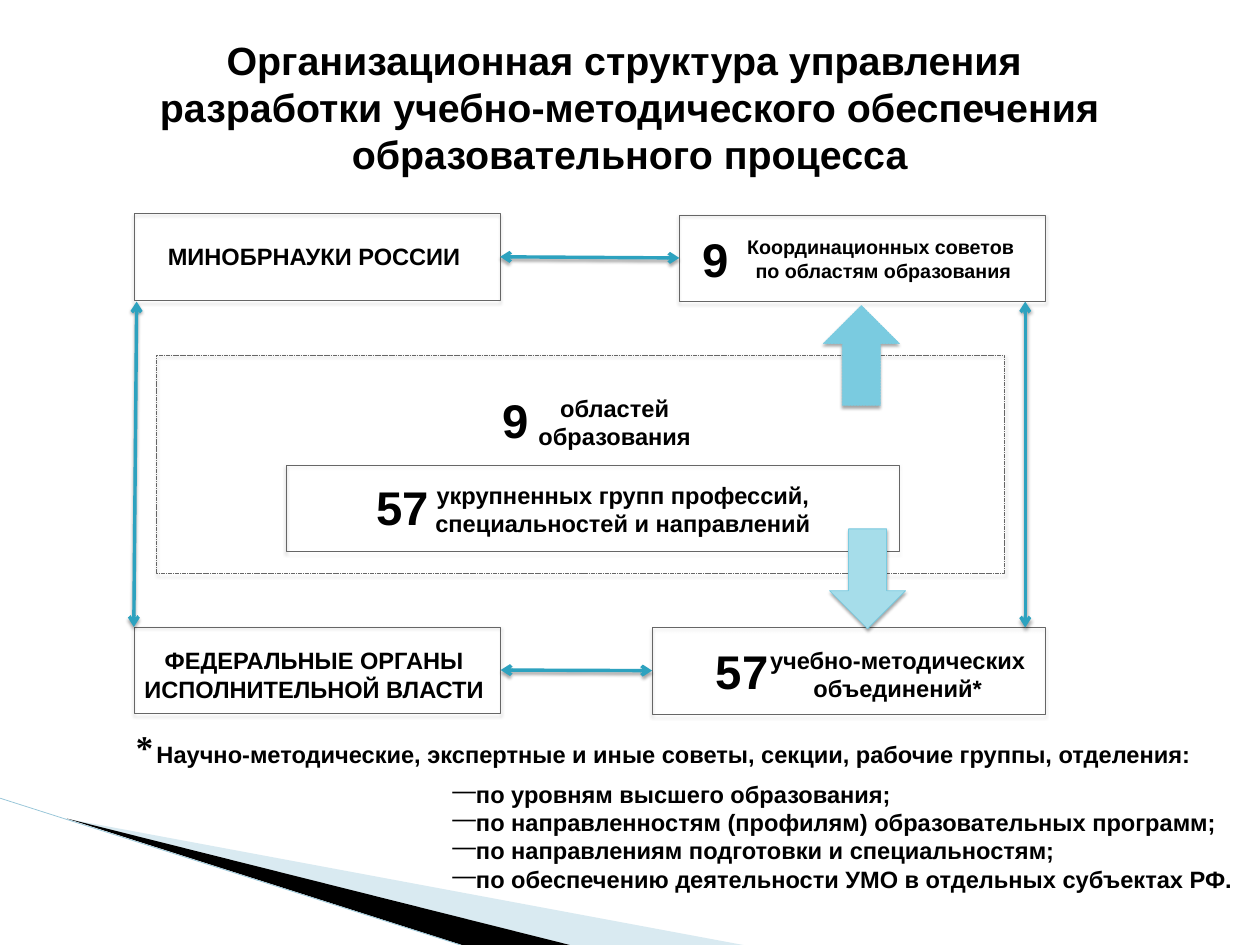
from lxml.etree import SubElement
from pptx import Presentation
from pptx.dml.color import RGBColor
from pptx.enum.dml import MSO_LINE
from pptx.enum.shapes import MSO_CONNECTOR, MSO_SHAPE
from pptx.enum.text import MSO_ANCHOR, MSO_AUTO_SIZE, PP_ALIGN
from pptx.oxml.ns import qn
from pptx.util import Inches, Pt

COLORS = {
    "text": "000000", "outline": "666666", "link": "2DA2BF",
    "up": "7ACBE0", "down": "A6DDEA", "wedge": "A0CBDC", "edge": "97C5D8",
}
TITLE = [
    "Организационная структура управления ",
    "разработки учебно-методического обеспечения",
    "образовательного процесса",
]
DIRECTIONS = [
    "по уровням высшего образования;",
    "по направленностям (профилям) образовательных программ;",
    "по направлениям подготовки и специальностям;",
    "по обеспечению деятельности УМО в отдельных субъектах РФ.",
]
LABELS = [
    (13.28, 11.34, 5.1, 1.11, ["учебно-методических объединений*"], 30),
    (7.24, 8.43, 7.49, 1.11, ["укрупненных групп профессий, специальностей и направлений"], 30),
    (8.81, 6.9, 4.06, 1.11, ["областей образования"], 30),
    (2.41, 11.35, 6.26, 1.11, ["ФЕДЕРАЛЬНЫЕ ОРГАНЫ ИСПОЛНИТЕЛЬНОЙ ВЛАСТИ"], 30),
    (2.41, 4.21, 6.26, 0.61, ["МИНОБРНАУКИ РОССИИ"], 30),
    (12.85, 4.1, 5.45, 0.94, ["Координационных советов ", "по областям образования"], 25),
    (2.38, 13.01, 19.12, 0.61,
     ["Научно-методические, экспертные и иные советы, секции, рабочие группы, отделения: "], 30),
]
COUNTS = [(12.04, 4.02, "9"), (12.51, 11.28, "57"), (8.51, 6.86, "9"), (6.52, 8.38, "57")]
BOXES = [
    (2.36, 3.77, 6.46, 1.53),
    (11.98, 3.79, 6.46, 1.53),
    (2.37, 11.06, 6.46, 1.53),
    (11.5, 11.07, 6.93, 1.53),
    (5.04, 8.2, 10.82, 1.53),
]
LINKS = [
    (8.83, 11.82, 11.5, 11.83),
    (8.82, 4.53, 11.98, 4.55),
    (2.41, 5.32, 2.36, 11.06),
    (18.08, 5.32, 18.08, 11.07),
]


def color(name):
    """Return the named colour."""
    return RGBColor.from_string(COLORS[name])


def add_shadow(effects):
    """Put a soft downward shadow into an effect list."""
    shadow = SubElement(effects, qn("a:outerShdw"), blurRad=str(Pt(4)), dist=str(Pt(3)),
                        dir="5400000", rotWithShape="0")
    rgb = SubElement(shadow, qn("a:srgbClr"), val=COLORS["text"])
    SubElement(rgb, qn("a:alpha"), val="35000")


def add_run(p, text, size, font="Arial"):
    """Add a bold black run to a paragraph."""
    r = p.add_run()
    r.text = text
    r.font.size = Pt(size)
    r.font.name = font
    r.font.bold = True
    r.font.color.rgb = color("text")


def add_bullet(p):
    """Give a paragraph a dash bullet with a hanging indent."""
    pPr = p._p.get_or_add_pPr()
    pPr.set("marL", str(Inches(0.37)))
    pPr.set("indent", str(-Inches(0.37)))
    SubElement(pPr, qn("a:buChar"), char="―")


def add_text(s, x, y, w, h, lines, size, font="Arial", bulleted=False):
    """Add a wrapped text box, centred or as a bulleted list."""
    tf = s.shapes.add_textbox(Inches(x), Inches(y), Inches(w), Inches(h)).text_frame
    tf.word_wrap = True
    for i, line in enumerate(lines):
        p = tf.add_paragraph() if i else tf.paragraphs[0]
        if bulleted:
            add_bullet(p)
        else:
            p.alignment = PP_ALIGN.CENTER
        add_run(p, line, size, font)


def add_title(s):
    """Place and format the title placeholder."""
    sp = s.shapes.title
    sp.left, sp.top, sp.width, sp.height = Inches(0), Inches(1.18), Inches(22.22), Inches(1.41)
    tf = sp.text_frame
    tf.auto_size = MSO_AUTO_SIZE.NONE
    tf.word_wrap = True
    tf.vertical_anchor = MSO_ANCHOR.MIDDLE
    tf.margin_left = tf.margin_right = Inches(0.22)
    tf.margin_top = tf.margin_bottom = Inches(0.11)
    p = tf.paragraphs[0]
    p.alignment = PP_ALIGN.CENTER
    for i, line in enumerate(TITLE):
        if i:
            p.add_line_break()
        add_run(p, line, 50)


def add_figure(s, kind, x, y, w, h, fill=None, line="outline", width=0.75, dashed=False):
    """Add a shadowed preset shape."""
    sp = s.shapes.add_shape(kind, Inches(x), Inches(y), Inches(w), Inches(h))
    if fill:
        sp.fill.solid()
        sp.fill.fore_color.rgb = color(fill)
    else:
        sp.fill.background()
    sp.line.color.rgb = color(line)
    sp.line.width = Pt(width)
    if dashed:
        sp.line.dash_style = MSO_LINE.SQUARE_DOT
    sp.shadow.inherit = False
    add_shadow(sp._element.spPr.find(qn("a:effectLst")))


def add_line(s, x1, y1, x2, y2, name, width, arrows=False):
    """Add a straight line, or a shadowed two-headed arrow."""
    sp = s.shapes.add_connector(MSO_CONNECTOR.STRAIGHT, Inches(x1), Inches(y1),
                                Inches(x2), Inches(y2))
    sp.line.color.rgb = color(name)
    sp.line.width = Pt(width)
    effects = SubElement(sp._element.spPr, qn("a:effectLst"))
    if arrows:
        for end in ("a:headEnd", "a:tailEnd"):
            SubElement(sp.line._get_or_add_ln(), qn(end), type="arrow")
        add_shadow(effects)


def add_wedge(s, points, name, alpha=None):
    """Add a borderless polygon, optionally translucent."""
    start, *rest = [(Inches(x), Inches(y)) for x, y in points]
    builder = s.shapes.build_freeform(*start)
    builder.add_line_segments(rest, close=True)
    sp = builder.convert_to_shape()
    sp.fill.solid()
    sp.fill.fore_color.rgb = color(name)
    sp.line.fill.background()
    sp.shadow.inherit = False
    if alpha:
        rgb = sp._element.spPr.find(qn("a:solidFill")).find(qn("a:srgbClr"))
        SubElement(rgb, qn("a:alpha"), val=str(alpha * 1000))


def main():
    """Build the slide and save it."""
    prs = Presentation()
    prs.slide_width, prs.slide_height = Inches(22.22), Inches(16.67)
    s = prs.slides.add_slide(prs.slide_layouts[5])
    add_wedge(s, [(1.21, 14.45), (13.11, 16.67), (10.05, 16.67)], "wedge", 40)
    add_wedge(s, [(1.18, 14.44), (10.05, 16.67), (8.15, 16.67)], "text")
    add_line(s, 0, 14.08, 8.12, 16.67, "edge", 0.95)
    add_title(s)
    add_text(s, 7.88, 13.7, 14.23, 2.12, DIRECTIONS, 30, bulleted=True)
    add_text(s, 1.97, 12.75, 1.16, 0.84, ["*"], 44, "Times New Roman")
    for label in LABELS:
        add_text(s, *label)
    for x, y, count in COUNTS:
        add_text(s, x, y, 1.16, 1.11, [count], 60)
    for box in BOXES:
        add_figure(s, MSO_SHAPE.RECTANGLE, *box)
    add_figure(s, MSO_SHAPE.RECTANGLE, 2.76, 6.26, 14.96, 3.86, dashed=True)
    for link in LINKS:
        add_line(s, *link, "link", 4.33, arrows=True)
    add_figure(s, MSO_SHAPE.UP_ARROW, 14.52, 5.39, 1.34, 1.76, "up", "up", 1, dashed=True)
    add_figure(s, MSO_SHAPE.DOWN_ARROW, 14.63, 9.33, 1.34, 1.76, "down", "up", 1)
    prs.save("out.pptx")


if __name__ == "__main__":
    main()
